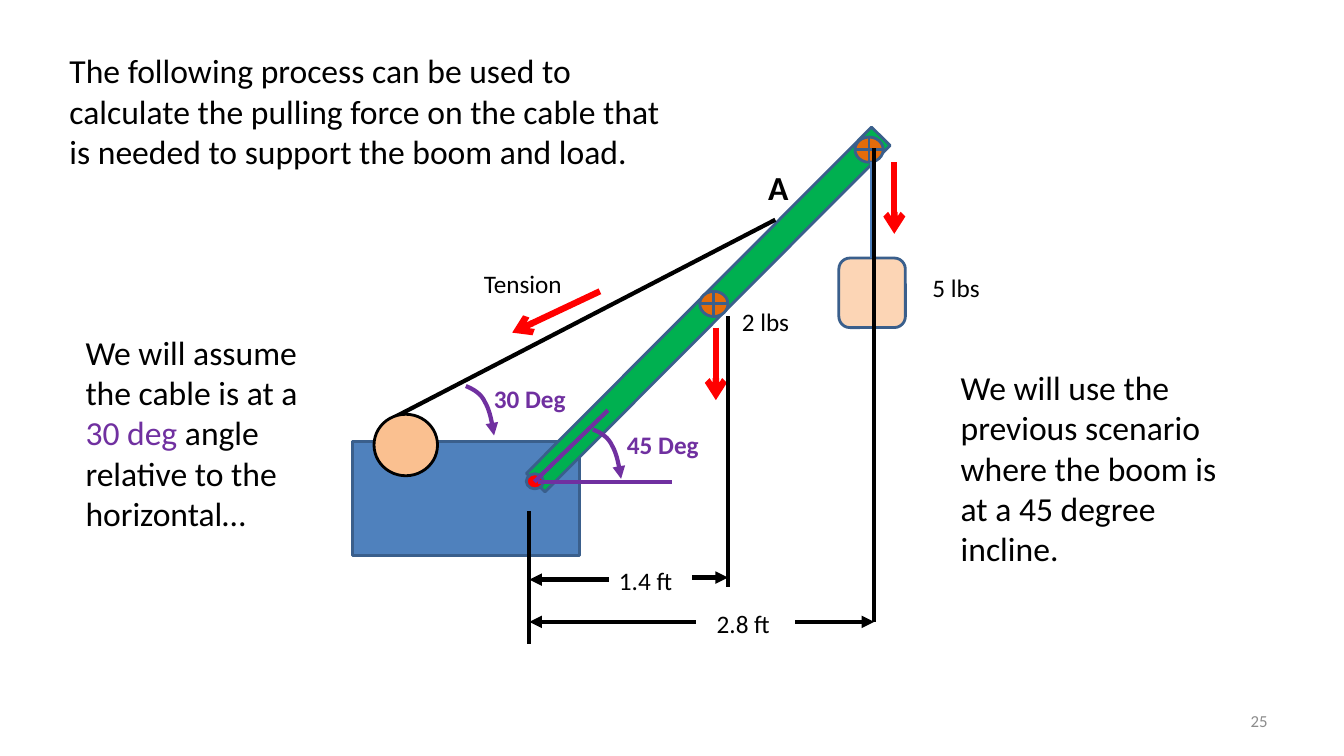
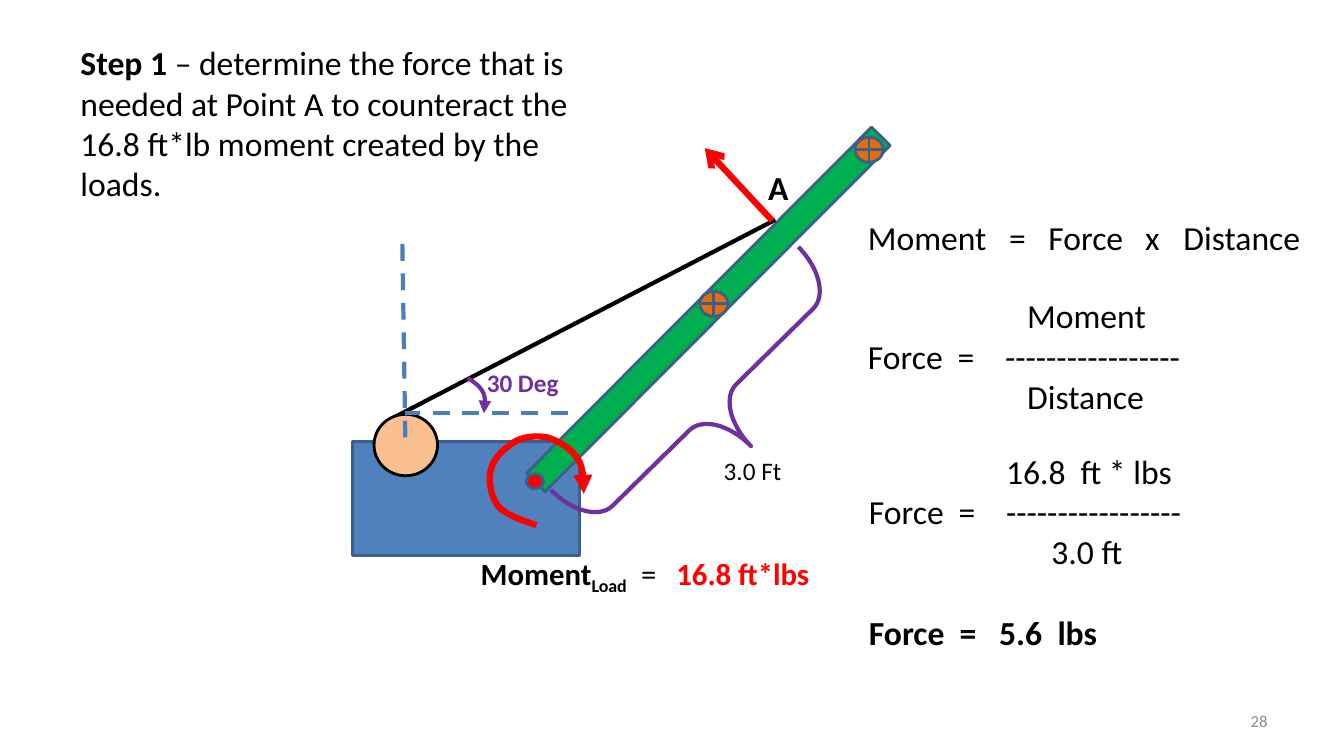
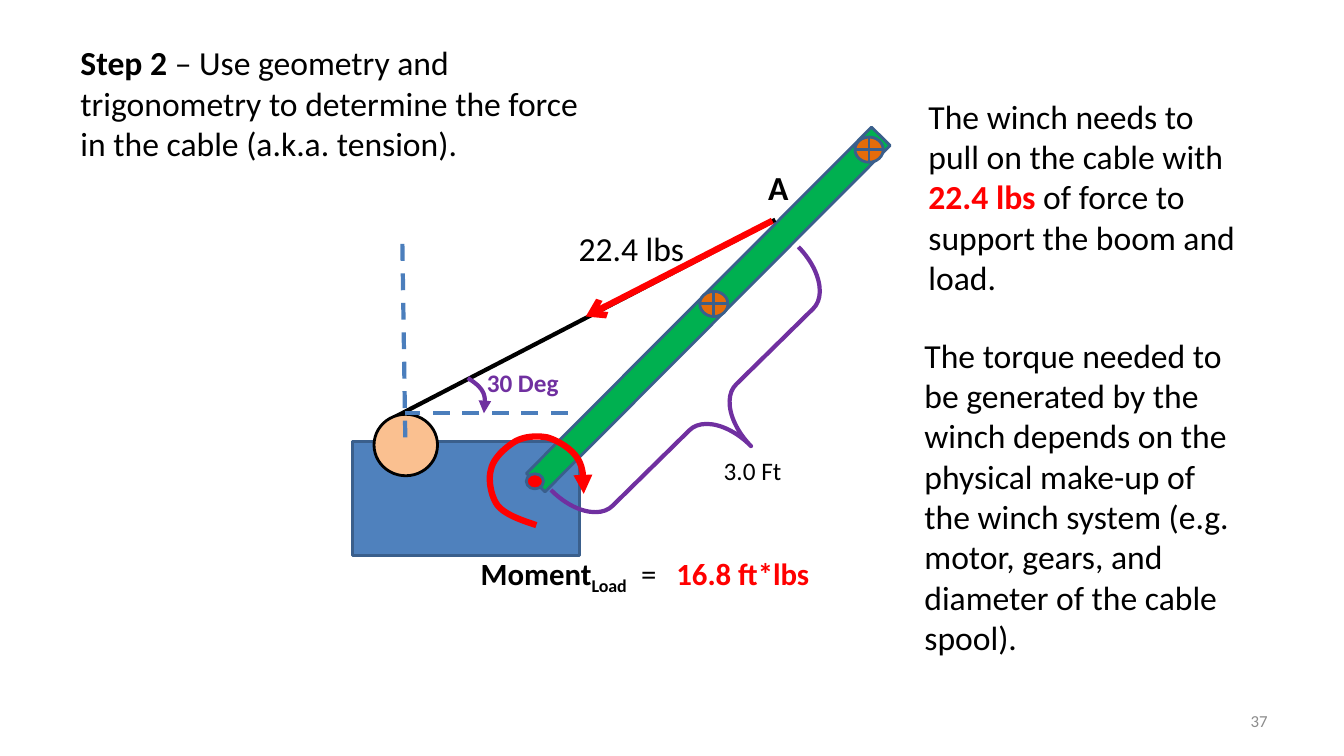
from lxml import etree
from pptx import Presentation
from pptx.dml.color import RGBColor
from pptx.enum.dml import MSO_LINE
from pptx.enum.shapes import MSO_CONNECTOR, MSO_SHAPE
from pptx.enum.text import MSO_ANCHOR, MSO_AUTO_SIZE, PP_ALIGN
from pptx.oxml.ns import qn
from pptx.util import Pt

STRAIGHT = MSO_CONNECTOR.STRAIGHT
RECTANGLE = MSO_SHAPE.RECTANGLE
ROUNDED = MSO_SHAPE.ROUNDED_RECTANGLE
ELLIPSE = MSO_SHAPE.OVAL
CROSS_CIRCLE = MSO_SHAPE.FLOWCHART_OR
BRACE = MSO_SHAPE.LEFT_BRACE
DASH = MSO_LINE.DASH
TOP, MIDDLE = MSO_ANCHOR.TOP, MSO_ANCHOR.MIDDLE
LEFT, RIGHT = PP_ALIGN.LEFT, PP_ALIGN.RIGHT
GROW = MSO_AUTO_SIZE.SHAPE_TO_FIT_TEXT

FONT = "Calibri"
BLACK, RED, PURPLE, GREY = "000000", "FF0000", "7030A0", "8C8C8C"
BLUE, OUTLINE, ROPE = "4F81BD", "3A5F8C", "4B7EBC"
GREEN, ORANGE, PEACH, SAND = "00B050", "E46C0A", "FCD5B5", "FAC090"

# Lengths are in px, 100 to the inch
SCALE = 9144
DIAGRAM = (350, 120)
POINT_A = (416, 99)
# Bezier points of curved arrows: a start, then three points a piece
SWEEP = [(0, 0), (7, 3), (15, 7), (19, 16), (24, 24), (26, 37), (28, 49)]
SMALL_SWEEP = [(0, 0), (6, 4), (12, 8), (15, 14), (18, 20), (17, 27), (16, 35)]
TURN = [(0, 0), (-15, -5), (-30, -10), (-38, -19), (-45, -28), (-48, -45),
        (-45, -55), (-43, -66), (-31, -77), (-21, -83), (-12, -88), (0, -89),
        (11, -87), (21, -84), (35, -76), (41, -66), (47, -57), (47, -44),
        (47, -31)]


def px(value):
    return round(value * SCALE)


def color(hex_string):
    return RGBColor.from_string(hex_string)


class Region:
    """A part of a slide; every place is counted from its left top corner."""

    def __init__(self, slide, left=0, top=0):
        self.shapes = slide.shapes
        self.left, self.top = left, top

    def place(self, x, y):
        return px(self.left + x), px(self.top + y)

    def text(self, box, paragraphs, size=24, tint=BLACK, bold=False,
             align=LEFT, anchor=TOP):
        """Each paragraph is (runs, tab stops, space before in points)."""
        x, y, width, height = box
        shape = self.shapes.add_textbox(*self.place(x, y), px(width), px(height))
        frame = shape.text_frame
        frame.word_wrap = True
        frame.vertical_anchor = anchor
        if anchor == TOP:
            frame.auto_size = GROW
        for index, (runs, tabs, before) in enumerate(paragraphs):
            paragraph = frame.paragraphs[0] if index == 0 else frame.add_paragraph()
            paragraph.alignment = align
            if before:
                paragraph.space_before = Pt(before)
            if tabs:
                add_tabs(paragraph, tabs)
            for words, changes in runs:
                run = paragraph.add_run()
                run.text = words
                run.font.name = FONT
                run.font.size = Pt(size)
                run.font.bold = changes.get("bold", bold)
                run.font.color.rgb = color(changes.get("tint", tint))
                if "baseline" in changes:
                    run.font._element.set("baseline", str(changes["baseline"]))

    def label(self, box, words, size=18, tint=BLACK, bold=False):
        self.text(box, [([(words, {})], (), 0)], size, tint, bold)

    def shape(self, kind, box, fill, line=OUTLINE, weight=2, turn=0):
        x, y, width, height = box
        shape = self.shapes.add_shape(kind, *self.place(x, y), px(width), px(height))
        shape.rotation = turn
        style_shape(shape, fill, line, weight)
        return shape

    def line(self, start, end, tint=BLACK, weight=3, dash=None, head=None, tail=None):
        connector = self.shapes.add_connector(
            STRAIGHT, *self.place(*start), *self.place(*end))
        connector.line.color.rgb = color(tint)
        connector.line.width = Pt(weight)
        if dash:
            connector.line.dash_style = dash
        add_arrowheads(connector, head, tail)
        etree.SubElement(connector._element.spPr, qn("a:effectLst"))
        return connector

    def force(self, start, end):
        self.line(start, end, RED, 4.5, tail="arrow")

    def curved_arrow(self, start, points, tint, weight=3):
        x, y = start
        points = [(x + dx, y + dy) for dx, dy in points]
        builder = self.shapes.build_freeform(*self.place(*points[0]), scale=1.0)
        outline = [self.place(*point) for point in bezier(points)]
        builder.add_line_segments(outline, close=False)
        shape = builder.convert_to_shape()
        style_shape(shape, None, tint, weight)
        add_arrowheads(shape, tail="triangle")


def style_shape(shape, fill, line, weight):
    shape.shadow.inherit = False
    if fill:
        shape.fill.solid()
        shape.fill.fore_color.rgb = color(fill)
    else:
        shape.fill.background()
    shape.line.color.rgb = color(line)
    shape.line.width = Pt(weight)


def add_arrowheads(shape, head=None, tail=None):
    line = shape.line._get_or_add_ln()
    for tag, kind in (("a:headEnd", head), ("a:tailEnd", tail)):
        if kind:
            etree.SubElement(line, qn(tag), type=kind)


def add_tabs(paragraph, stops):
    tabs = etree.SubElement(paragraph._p.get_or_add_pPr(), qn("a:tabLst"))
    for stop in stops:
        etree.SubElement(tabs, qn("a:tab"), pos=str(px(stop)), algn="l")


def bezier(points, steps=12):
    for first in range(0, len(points) - 1, 3):
        piece = points[first:first + 4]
        for step in range(1, steps + 1):
            t = step / steps
            weights = ((1 - t) ** 3, 3 * t * (1 - t) ** 2, 3 * t * t * (1 - t), t ** 3)
            yield tuple(sum(w * point[axis] for w, point in zip(weights, piece))
                        for axis in (0, 1))


def new_slide(presentation, number):
    slide = presentation.slides.add_slide(presentation.slide_layouts[6])
    page = Region(slide)
    page.text((956, 695, 311, 40), [([(number, {})], (), 0)], 12, GREY,
              align=RIGHT, anchor=MIDDLE)
    return slide, page


def draw_crane(diagram):
    # Base, boom and pivot
    diagram.shape(RECTANGLE, (0, 318, 225, 113), BLUE)
    diagram.shape(RECTANGLE, (110, 174, 485, 26), GREEN, turn=314.9)
    diagram.shape(ELLIPSE, (172, 350, 17, 15), RED)
    # Centres of the two weights
    for x, y in ((344, 169), (498, 16)):
        diagram.shape(CROSS_CIRCLE, (x, y, 28, 25), ORANGE)
    # Cable from point A to the winch
    diagram.line((419, 98), (41, 294))
    diagram.label((402, 41, 46, 50), "A", 24, bold=True)
    diagram.shape(ELLIPSE, (21, 291, 63, 61), SAND, BLACK)


def draw_loads(diagram):
    # Hanging load and its rope
    load = diagram.shape(ROUNDED, (482, 136, 66, 69), PEACH)
    rope = diagram.line((515, 41), (515, 136), ROPE)
    rope.end_connect(load, 0)
    diagram.label((565, 145, 71, 37), "5 lbs")
    diagram.label((376, 179, 103, 37), "2 lbs")
    diagram.label((120, 141, 125, 40), "Tension")
    # Forces
    for start, end in (((360, 205), (360, 277)), ((537, 41), (537, 112)),
                       ((245, 169), (158, 210))):
        diagram.force(start, end)


def draw_dimensions(diagram):
    # Extension lines
    for x, top, bottom in ((175, 387, 519), (372, 194, 462), (517, 27, 497)):
        diagram.line((x, top), (x, bottom))
    # Dimension lines, arrowhead on the extension line
    for outer, inner, y in ((175, 254, 455), (372, 336, 453),
                            (175, 340, 497), (517, 439, 497)):
        diagram.line((outer, y), (inner, y), head="triangle")
    diagram.label((254, 436, 81, 40), "1.4 ft")
    diagram.label((351, 479, 80, 40), "2.8 ft")


def draw_angles(diagram):
    diagram.line((180, 358), (253, 287), PURPLE)
    diagram.line((184, 358), (317, 358), PURPLE)
    for words, x, y, label_x, label_y in (("30 Deg", 112, 263, 130, 255),
                                          ("45 Deg", 238, 306, 262, 301)):
        diagram.curved_arrow((x, y), SWEEP, PURPLE)
        diagram.label((label_x, label_y, 103, 40), words, tint=PURPLE, bold=True)


def draw_moment(diagram):
    # Moment of the loads about the pivot
    diagram.curved_arrow((182, 401), TURN, RED, 4.5)
    runs = [("Moment", {"bold": True}), ("Load", {"bold": True, "baseline": -25000}),
            ("\t=\t", {}), ("16.8 ft*lbs", {"bold": True, "tint": RED})]
    diagram.text((117, 425, 454, 47), [(runs, (159, 194), 0)], 22)
    # Cable angle
    diagram.line((52, 314), (49, 116), ROPE, dash=DASH)
    diagram.line((213, 290), (52, 290), ROPE, dash=DASH)
    diagram.curved_arrow((114, 255), SMALL_SWEEP, PURPLE)
    diagram.label((123, 239, 103, 40), "30 Deg", tint=PURPLE, bold=True)
    # Lever arm
    brace = diagram.shape(BRACE, (303, 112, 108, 344), None, PURPLE, 3, 225.5)
    brace.adjustments[0] = 0.3
    brace.adjustments[1] = 0.5
    diagram.label((358, 327, 103, 40), "3.0 Ft")


def draw_equations(region):
    def row(words, *tabs, before=0, bold=False):
        return [(words, {"bold": bold})], tabs, before

    fraction_bar = "Force\t=\t-----------------"
    region.text((0, 0, 454, 50),
                [row("Moment\t=\tForce\tx\tDistance", 140, 179, 275, 313)])
    region.text((0, 78, 385, 131), [
        row("\tMoment", 158),
        row(fraction_bar, 89, 136),
        row("\tDistance", 158)])
    region.text((1, 232, 415, 212), [
        row("\t16.8\tft * lbs", 136, 210),
        row(fraction_bar, 89, 136),
        row("\t3.0 ft", 181),
        row("Force\t=\t5.6\tlbs", 90, 129, 187, before=29, bold=True)])


def build_scenario(presentation):
    slide, page = new_slide(presentation, "25")
    page.label((59, 45, 622, 131),
               "The following process can be used to calculate the pulling force on "
               "the cable that is needed to support the boom and load.", 24)
    page.text((75, 324, 264, 212), [([
        ("We will assume the cable is at a ", {}), ("30 deg", {"tint": PURPLE}),
        (" angle relative to the horizontal…", {})], (), 0)])
    page.label((943, 359, 299, 212),
               "We will use the previous scenario where the boom is at a 45 degree "
               "incline.", 24)
    diagram = Region(slide, *DIAGRAM)
    draw_crane(diagram)
    draw_loads(diagram)
    draw_dimensions(diagram)
    draw_angles(diagram)


def build_step(presentation, number, step, task):
    slide, page = new_slide(presentation, number)
    page.text((70, 37, 543, 172), [([(step, {"bold": True}), (task, {})], (), 0)])
    diagram = Region(slide, *DIAGRAM)
    draw_crane(diagram)
    draw_moment(diagram)
    return slide, page, diagram


def build_step_one(presentation):
    slide, page, diagram = build_step(
        presentation, "28", "Step 1",
        " – determine the force that is needed at Point A to counteract the "
        "16.8 ft*lb moment created by the loads.")
    diagram.force(POINT_A, (349, 27))
    draw_equations(Region(slide, 851, 210))


def build_step_two(presentation):
    slide, page, diagram = build_step(
        presentation, "37", "Step 2",
        " – Use geometry and trigonometry to determine the force in the cable "
        "(a.k.a. tension).")
    diagram.label((214, 101, 142, 50), "22.4 lbs", 24)
    diagram.force(POINT_A, (231, 194))
    page.text((911, 90, 339, 212), [([
        ("The winch needs to pull on the cable with ", {}),
        ("22.4 lbs", {"bold": True, "tint": RED}),
        (" of force to support the boom and load.", {})], (), 0)])
    page.label((907, 327, 339, 333),
               "The torque needed to be generated by the winch depends on the "
               "physical make-up of the winch system (e.g. motor, gears, and "
               "diameter of the cable spool).", 24)


def main():
    presentation = Presentation()
    presentation.slide_width, presentation.slide_height = px(1333), px(750)
    build_scenario(presentation)
    build_step_one(presentation)
    build_step_two(presentation)
    presentation.save("out.pptx")


if __name__ == "__main__":
    main()
